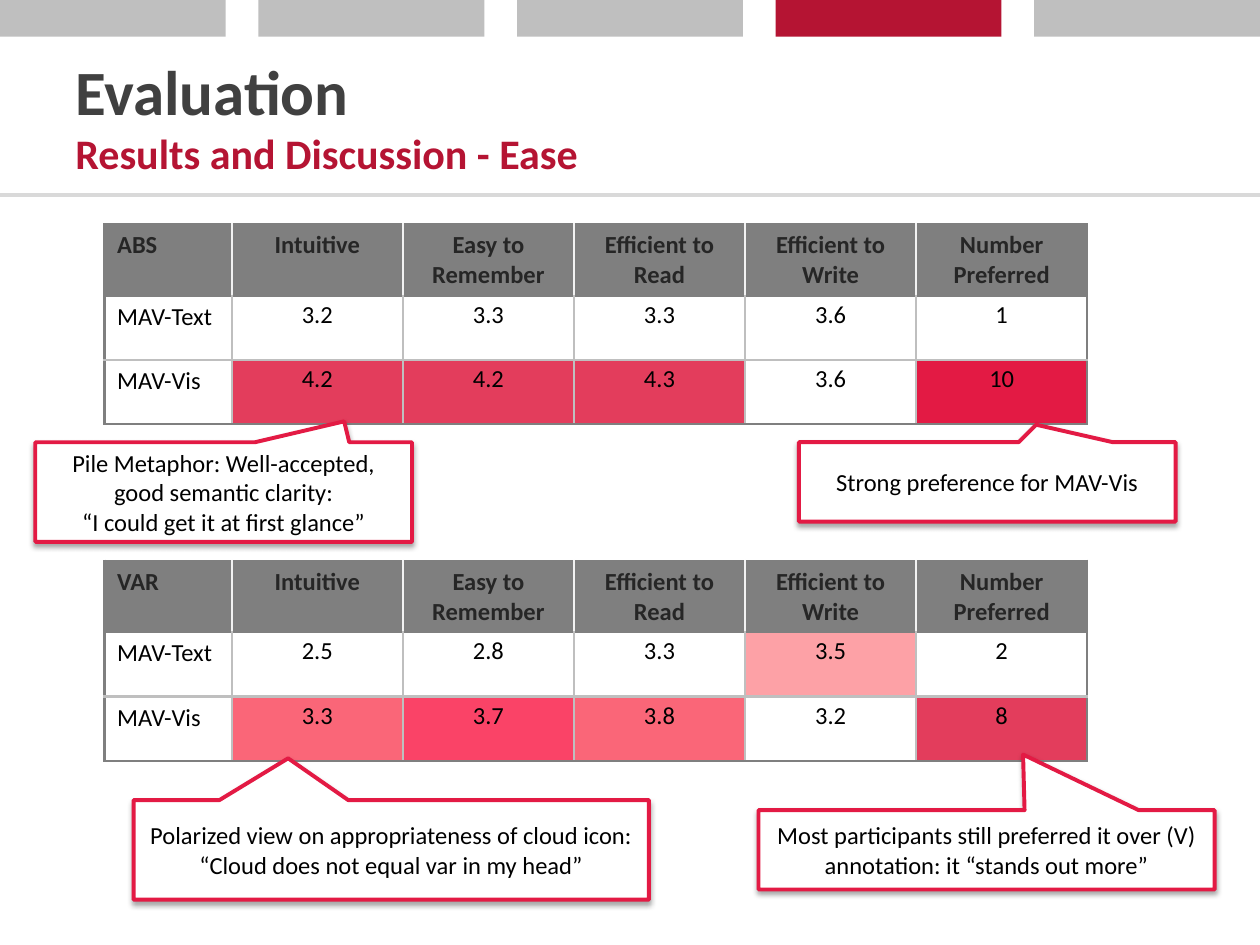
import dataclasses

import lxml.etree
import pptx
import pptx.dml.color
import pptx.enum.shapes
import pptx.enum.text
import pptx.oxml
import pptx.oxml.ns
import pptx.util

COLUMNS, ROWS = 100, 75
WIDTH, HEIGHT = pptx.util.Inches(10), pptx.util.Inches(7.5)
FONT = "Calibri"
CRIMSON, RED, ROSE = "B51433", "E31A44", "E33D5C"
CORAL, PINK, BLUSH = "FA6678", "FA4367", "FDA1A6"
WHITE, BLACK, GRAY, SILVER = "FFFFFF", "000000", "7F7F7F", "BFBFBF"
HEADINGS = ["Intuitive", "Easy to Remember", "Efficient to Read",
            "Efficient to Write", "Number Preferred"]
COLUMN_WIDTHS = [10.1] + [13.58] * 5
ROW_HEIGHTS = [5.6, 5.1, 5.1]
CENTER = pptx.enum.text.PP_ALIGN.CENTER
MIDDLE = pptx.enum.text.MSO_ANCHOR.MIDDLE
SHAPES = pptx.enum.shapes.MSO_SHAPE


@dataclasses.dataclass
class Scores:
    """Ratings of one annotation, with highlights keyed by row and column."""
    name: str
    top: float
    text_values: list[str]
    vis_values: list[str]
    highlights: dict[tuple[int, int], str]


@dataclasses.dataclass
class Callout:
    """A comment box whose tip is given as shares of its size."""
    left: float
    top: float
    width: float
    height: float
    tip: tuple[float, float]
    lines: list[str]


TABLES = [
    Scores("ABS", 17.8, ["3.2", "3.3", "3.3", "3.6", "1"],
           ["4.2", "4.2", "4.3", "3.6", "10"],
           {(2, 1): ROSE, (2, 2): ROSE, (2, 3): ROSE, (2, 5): RED}),
    Scores("VAR", 44.5, ["2.5", "2.8", "3.3", "3.5", "2"],
           ["3.3", "3.7", "3.8", "3.2", "8"],
           {(1, 4): BLUSH, (2, 1): CORAL, (2, 2): PINK, (2, 3): CORAL, (2, 5): ROSE}),
]
CALLOUTS = [
    Callout(2.8, 35.1, 29.9, 7.9, (0.32, -0.71),
            ["Pile Metaphor: Well-accepted, good semantic clarity:",
             "“I could get it at first glance”"]),
    Callout(63.4, 35.1, 29.9, 6.3, (0.13, -0.72), ["Strong preference for MAV-Vis"]),
    Callout(10.6, 63.5, 40.9, 7.9, (-0.2, -0.92),
            ["Polarized view on appropriateness of cloud icon: "
             "“Cloud does not equal var in my head”"]),
    Callout(60.2, 64.3, 36.2, 6.3, (0.08, -1.2),
            ["Most participants still preferred it over (V) "
             "annotation: it “stands out more”"]),
]


def color(value: str) -> pptx.dml.color.RGBColor:
    """Turn a hex string into a colour."""
    return pptx.dml.color.RGBColor.from_string(value)


def across(columns: float) -> int:
    """Convert grid columns to a length."""
    return round(WIDTH * columns / COLUMNS)


def down(rows: float) -> int:
    """Convert grid rows to a length."""
    return round(HEIGHT * rows / ROWS)


def place(left: float, top: float, width: float, height: float) -> tuple[int, ...]:
    """Convert a grid rectangle to lengths."""
    return across(left), down(top), across(width), down(height)


def style(font, size: float, value: str, bold: bool = False) -> None:
    """Set the face, size, colour and weight of a font."""
    font.name, font.size, font.bold = FONT, pptx.util.Pt(size), bold
    font.color.rgb = color(value)


def draw_header(page) -> None:
    """Draw the progress bar, the title and the rule below it."""
    rule = page.shapes.add_connector(
        pptx.enum.shapes.MSO_CONNECTOR.STRAIGHT, 0, down(15.5), WIDTH, down(15.5))
    rule.line.color.rgb = color("D9D9D9")
    rule.line.width = pptx.util.Pt(2.25)
    lxml.etree.SubElement(rule.element.spPr, pptx.oxml.ns.qn("a:effectLst"))
    for step in range(5):
        bar = page.shapes.add_shape(SHAPES.RECTANGLE, *place(step * 20.52, 0, 17.92, 2.9))
        bar.shadow.inherit = False
        bar.fill.solid()
        bar.fill.fore_color.rgb = color(CRIMSON if step == 3 else SILVER)
        bar.line.fill.background()
    frame = page.shapes.add_textbox(*place(5, 2.9, 90, 12.5)).text_frame
    frame.word_wrap = True
    frame.vertical_anchor = MIDDLE
    para = frame.paragraphs[0]
    span = para.add_run()
    span.text = "Evaluation"
    style(span.font, 36, "404040", True)
    para.add_line_break()
    span = para.add_run()
    span.text = "Results and Discussion - Ease"
    style(span.font, 24, CRIMSON, True)


def draw_border(cell, side: str, value: str) -> None:
    """Add one border line to a table cell."""
    line = pptx.oxml.parse_xml(
        f'<a:ln{side} {pptx.oxml.ns.nsdecls("a")} w="19050"><a:solidFill>'
        f'<a:srgbClr val="{value}"/></a:solidFill></a:ln{side}>')
    cell._tc.get_or_add_tcPr().append(line)


def draw_cell(cell, row: int, column: int, text: str, fill: str) -> None:
    """Fill in and format one table cell."""
    inner = "F2F2F2" if row == 0 else SILVER
    draw_border(cell, "L", GRAY if column == 0 else inner)
    draw_border(cell, "R", GRAY if column == len(HEADINGS) else inner)
    draw_border(cell, "T", SILVER if row == 2 else GRAY)
    draw_border(cell, "B", SILVER if row == 1 else GRAY)
    cell.fill.solid()
    cell.fill.fore_color.rgb = color(fill)
    cell.text = text
    para = cell.text_frame.paragraphs[0]
    style(para.font, 14, "262626" if row == 0 else BLACK, row == 0)
    if column > 0:
        para.alignment = CENTER
    if row > 0 and column > 0:
        para.line_spacing = 1.15
        cell.margin_left = cell.margin_right = pptx.util.Inches(0.07)
        cell.margin_top = cell.margin_bottom = 0


def draw_scores(page, scores: Scores) -> None:
    """Draw one table of ratings."""
    rows = [[scores.name, *HEADINGS], ["MAV-Text", *scores.text_values],
            ["MAV-Vis", *scores.vis_values]]
    table = page.shapes.add_table(
        len(rows), len(rows[0]),
        *place(8.3, scores.top, sum(COLUMN_WIDTHS), sum(ROW_HEIGHTS))).table
    table.horz_banding = False
    for column, width in zip(table.columns, COLUMN_WIDTHS):
        column.width = across(width)
    for row, height in zip(table.rows, ROW_HEIGHTS):
        row.height = down(height)
    for r, texts in enumerate(rows):
        for c, text in enumerate(texts):
            fill = GRAY if r == 0 else scores.highlights.get((r, c), WHITE)
            draw_cell(table.cell(r, c), r, c, text, fill)


def draw_callout(page, callout: Callout) -> None:
    """Draw one comment box with its soft shadow."""
    box = page.shapes.add_shape(
        SHAPES.RECTANGULAR_CALLOUT,
        *place(callout.left, callout.top, callout.width, callout.height))
    box.adjustments[0], box.adjustments[1] = callout.tip
    box.fill.solid()
    box.fill.fore_color.rgb = color(WHITE)
    box.line.color.rgb = color(RED)
    box.line.width = pptx.util.Pt(2.25)
    box.element.spPr.append(pptx.oxml.parse_xml(
        f'<a:effectLst {pptx.oxml.ns.nsdecls("a")}><a:outerShdw blurRad="39370" '
        f'dist="22860" dir="5400000" rotWithShape="0"><a:srgbClr val="{BLACK}">'
        '<a:alpha val="35000"/></a:srgbClr></a:outerShdw></a:effectLst>'))
    frame = box.text_frame
    frame.word_wrap = True
    frame.vertical_anchor = MIDDLE
    frame.text = "\n".join(callout.lines)
    for para in frame.paragraphs:
        para.alignment = CENTER
        style(para.font, 14, BLACK)


def main() -> None:
    """Build the slide and save it."""
    deck = pptx.Presentation()
    deck.slide_width, deck.slide_height = WIDTH, HEIGHT
    page = deck.slides.add_slide(deck.slide_layouts[6])
    draw_header(page)
    for scores in TABLES:
        draw_scores(page, scores)
    for callout in CALLOUTS:
        draw_callout(page, callout)
    deck.save("out.pptx")


if __name__ == "__main__":
    main()
